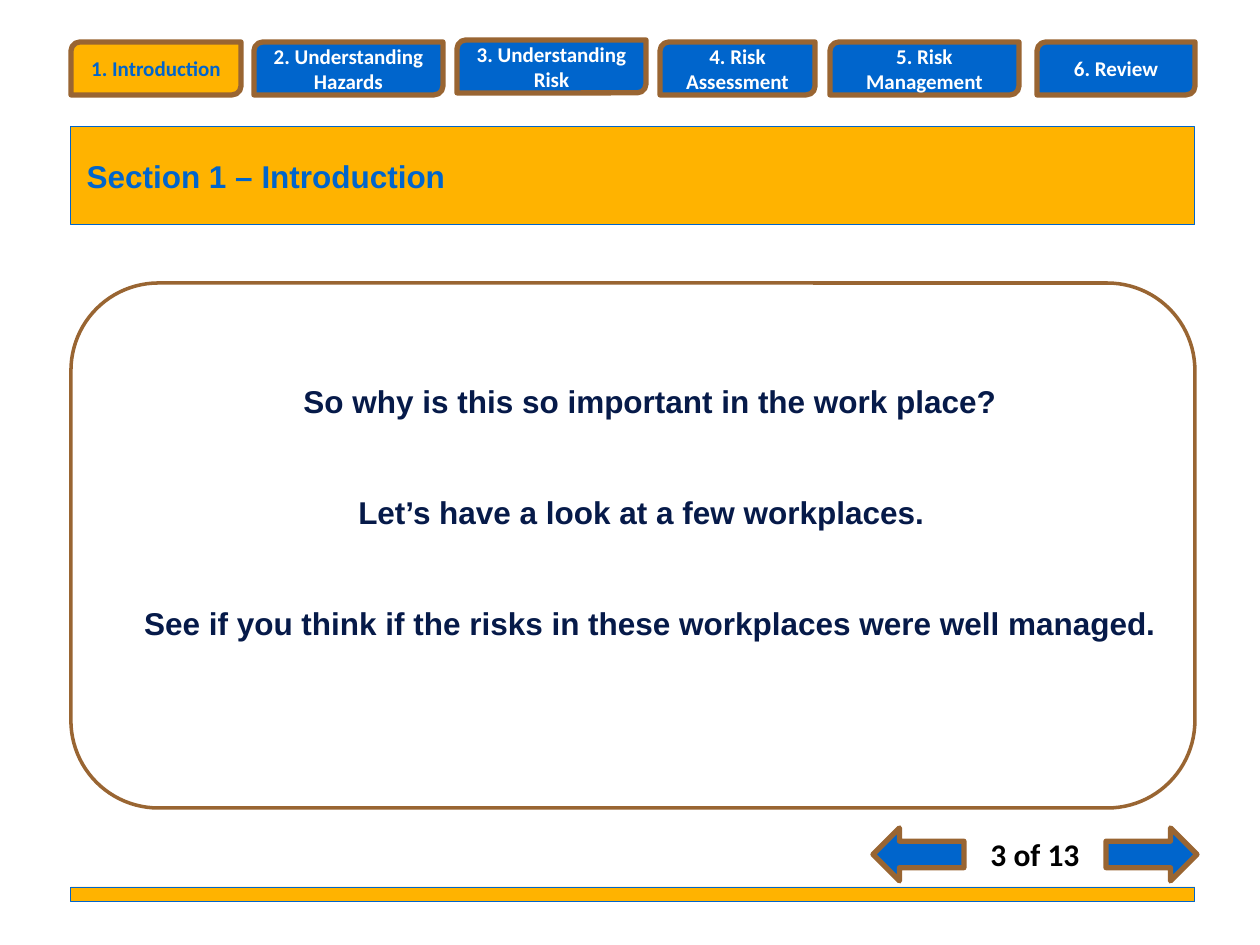
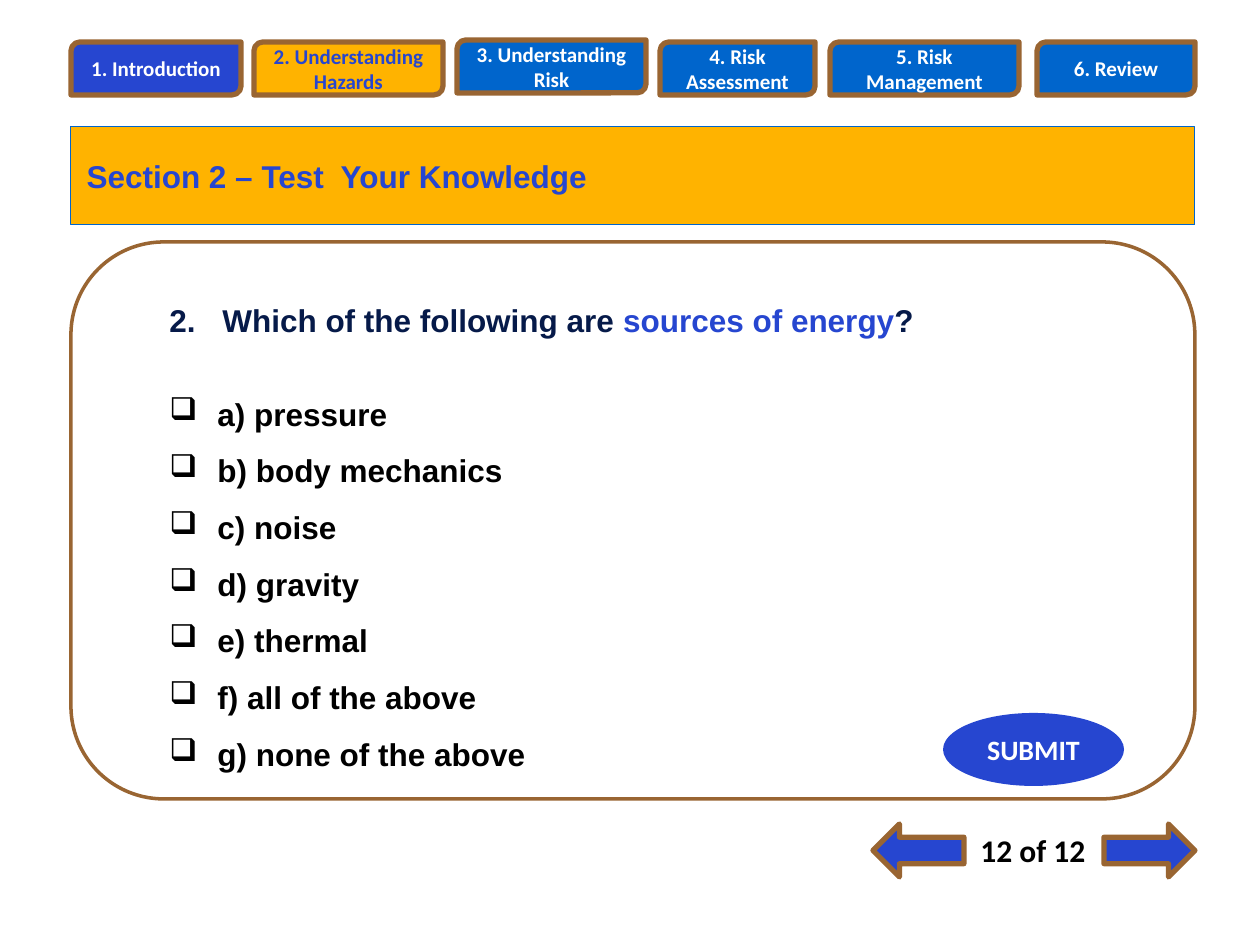
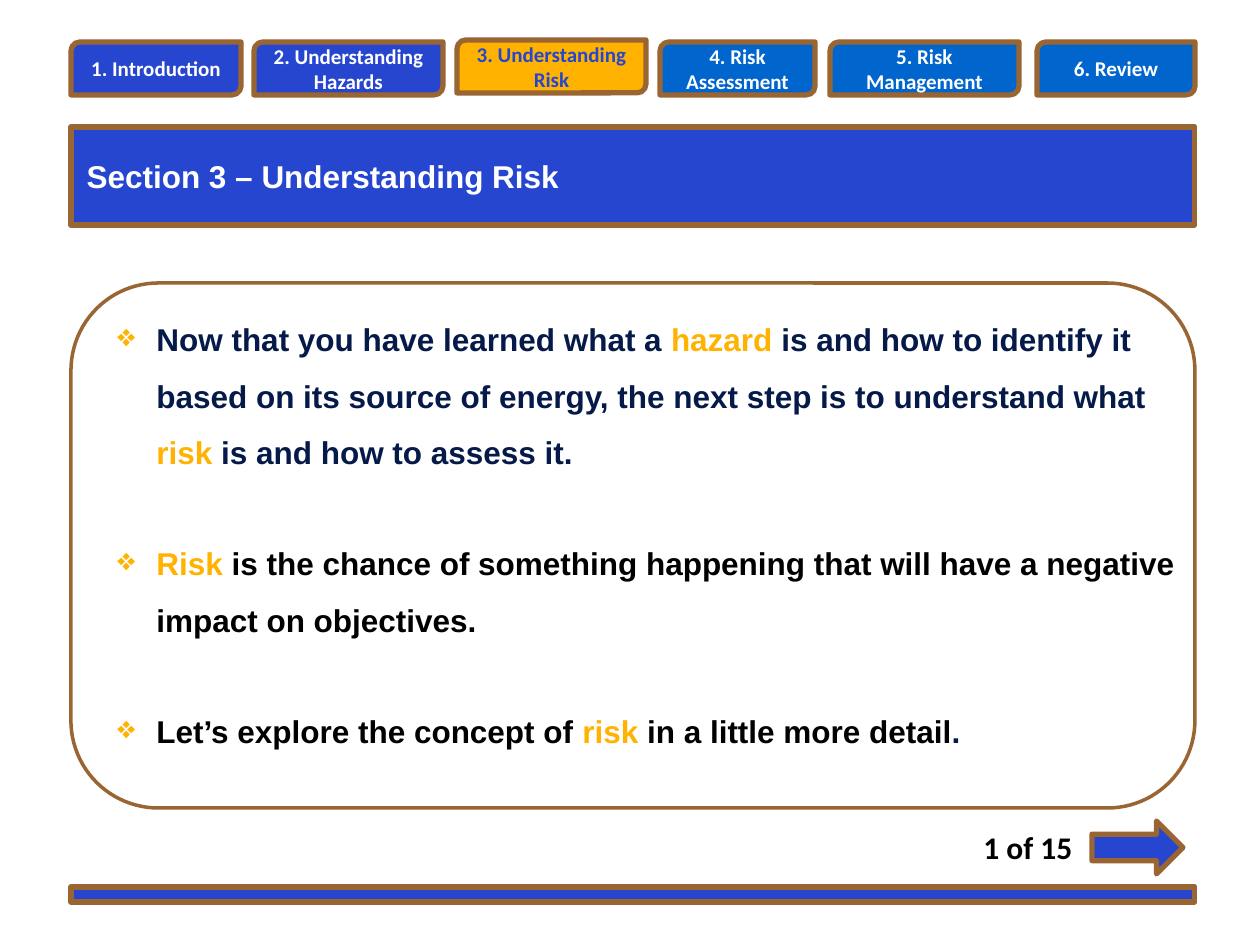
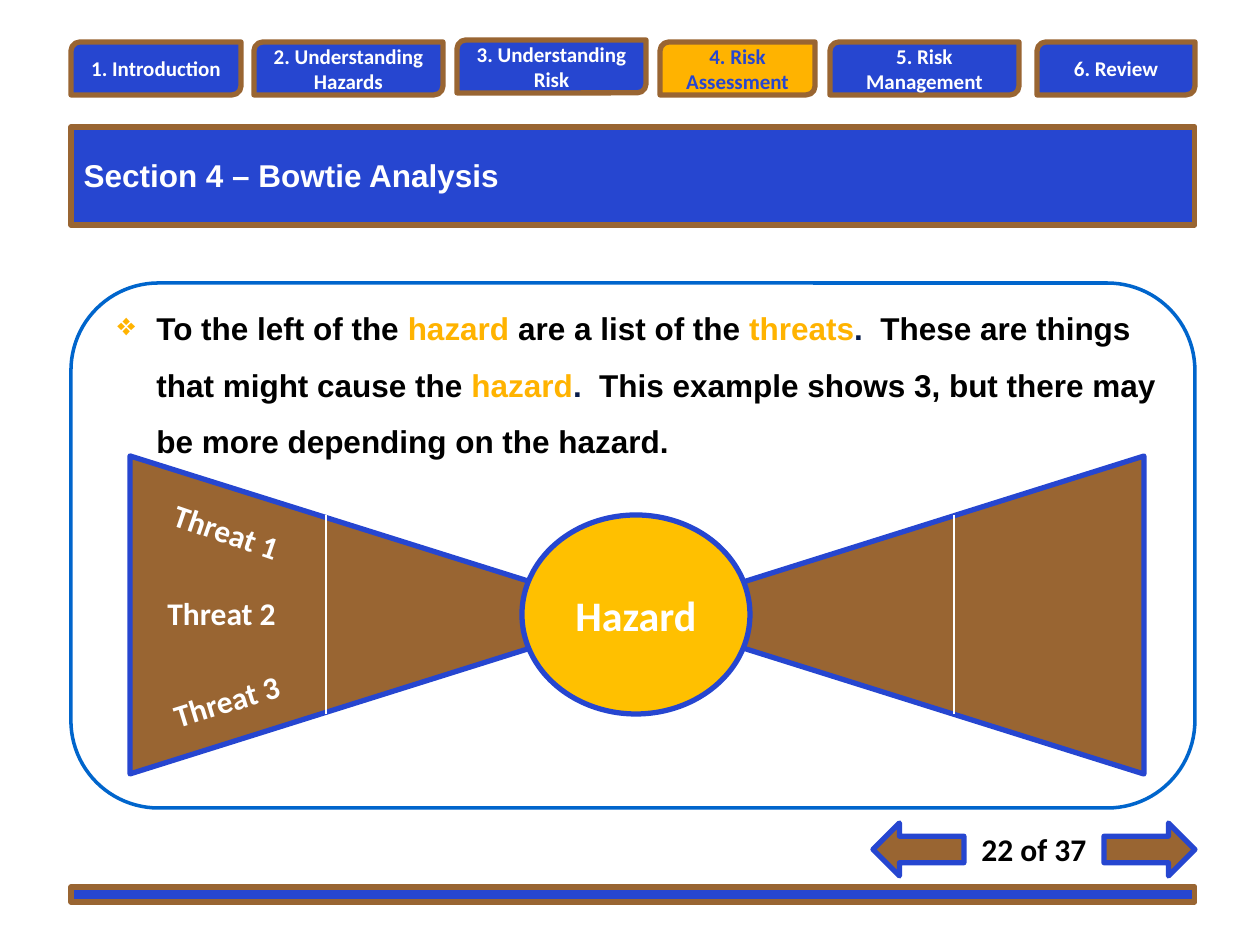
import pptx
import pptx.dml.color
import pptx.enum.shapes
import pptx.enum.text
import pptx.oxml.ns
import pptx.util
from lxml import etree

RGB = pptx.dml.color.RGBColor
SHAPE = pptx.enum.shapes.MSO_SHAPE
ALIGN = pptx.enum.text.PP_ALIGN
ANCHOR = pptx.enum.text.MSO_ANCHOR
qn = pptx.oxml.ns.qn

AMBER = RGB(0xFF, 0xB3, 0x00)
GOLD = RGB(0xFF, 0xC0, 0x00)
AZURE = RGB(0x00, 0x65, 0xCC)
ROYAL = RGB(0x26, 0x46, 0xD0)
BROWN = RGB(0x99, 0x65, 0x32)
NAVY = RGB(0x06, 0x1A, 0x49)
BLACK = RGB(0x00, 0x00, 0x00)
WHITE = RGB(0xFF, 0xFF, 0xFF)

EMU_PER_PX = 914400 / 126
BAND_LEFT, BAND_WIDTH = 71, 1124
TABS = [
    ("1. Introduction", 71, 42, 170),
    ("2. Understanding Hazards", 254, 42, 189),
    ("3. Understanding Risk", 457, 40, 189),
    ("4. Risk Assessment", 660, 42, 155),
    ("5. Risk Management", 830, 42, 189),
    ("6. Review", 1037, 42, 158),
]
WARM_BAND = (AMBER, AZURE, 0.5)
COOL_BAND = (ROYAL, BROWN, 3)


def px(length):
    return pptx.util.Emu(round(length * EMU_PER_PX))


def place(box):
    return [px(length) for length in box]


def add_box(page, kind, box, fill=None, line=None, weight=3, rotation=0):
    shape = page.shapes.add_shape(kind, *place(box))
    shape.shadow.inherit = False
    shape.rotation = rotation
    if fill is None:
        shape.fill.background()
    else:
        shape.fill.solid()
        shape.fill.fore_color.rgb = fill
    if line is None:
        shape.line.fill.background()
    else:
        shape.line.color.rgb = line
        shape.line.width = pptx.util.Pt(weight)
    return shape


def style_para(para, spans, size, font, align=ALIGN.LEFT):
    para.alignment = align
    para.font.name = font
    para.font.size = pptx.util.Pt(size)
    para.font.bold = True
    for text, color in spans:
        span = para.add_run()
        span.text = text
        if len(spans) > 1:
            span.font.color.rgb = color
    if len(spans) == 1:
        para.font.color.rgb = spans[0][1]


def add_label(shape, text, color, size):
    style_para(shape.text_frame.paragraphs[0], [(text, color)], size, "Calibri", ALIGN.CENTER)


def add_text(page, box, paragraphs, font="Arial", align=ALIGN.LEFT, rotation=0):
    shape = page.shapes.add_textbox(*place(box))
    shape.rotation = rotation
    frame = shape.text_frame
    frame.word_wrap = True
    for index, spans in enumerate(paragraphs):
        para = frame.add_paragraph() if index else frame.paragraphs[0]
        style_para(para, spans, 18, font, align)
    return frame.paragraphs


def space_lines(paras, gap=0):
    for index, para in enumerate(paras):
        para.line_spacing = 1.5
        if index and gap:
            para.space_before = pptx.util.Pt(gap)


def hang(para, indent, bullet=None, color=None):
    properties = para._p.get_or_add_pPr()
    properties.set("marL", str(px(indent)))
    properties.set("indent", str(-px(indent)))
    defaults = properties.find(qn("a:defRPr"))
    if color is not None:
        bullet_color = etree.Element(qn("a:buClr"))
        etree.SubElement(bullet_color, qn("a:srgbClr")).set("val", str(color))
        defaults.addprevious(bullet_color)
    if bullet:
        mark = etree.Element(qn("a:buChar"))
        mark.set("char", bullet)
        defaults.addprevious(mark)


def add_diamond_list(page, box, paragraphs):
    paras = add_text(page, box, paragraphs)
    space_lines(paras, 31)
    for para in paras:
        hang(para, 39, "❖", AMBER)


def add_title(page, text, color, band, left=74, top=151):
    title = page.shapes.title
    title.left, title.top, title.width, title.height = place((left, top, 954, 50))
    frame = title.text_frame
    frame.auto_size = pptx.enum.text.MSO_AUTO_SIZE.NONE
    frame.vertical_anchor = ANCHOR.TOP
    style_para(frame.paragraphs[0], [(text, color)], 18, "Arial")
    strip = add_box(page, SHAPE.RECTANGLE, (BAND_LEFT, 127, BAND_WIDTH, 98), *band)
    title.element.addprevious(strip.element)


def add_tabs(page, section, visited, accent):
    for number, (text, left, top, width) in enumerate(TABS, 1):
        active = number == section
        fill = AMBER if active else ROYAL if number <= visited else AZURE
        tab = add_box(page, SHAPE.ROUND_2_DIAG_RECTANGLE, (left, top, width, 53), fill, BROWN)
        add_label(tab, text, accent if active else WHITE, 12)


def add_panel(page, top=283, height=525, line=BROWN):
    add_box(page, SHAPE.ROUNDED_RECTANGLE, (BAND_LEFT, top, BAND_WIDTH, height), None, line, 2)


def add_footer(page, band):
    add_box(page, SHAPE.RECTANGLE, (BAND_LEFT, 887, BAND_WIDTH, 15), *band)


def add_pager(page, text, top, text_left, next_left, fill, line=BROWN, back=True):
    add_box(page, SHAPE.RIGHT_ARROW, (next_left, top, 91, 53), fill, line)
    align = ALIGN.CENTER if back else ALIGN.LEFT
    add_text(page, (text_left, top + 1, 134, 50), [[(text, BLACK)]], "Calibri", align)
    if back:
        add_box(page, SHAPE.LEFT_ARROW, (873, top, 91, 53), fill, line)


def add_divider(page, left):
    divider = page.shapes.add_connector(
        pptx.enum.shapes.MSO_CONNECTOR.STRAIGHT, *place((left, 515, left, 714)))
    divider.line.color.rgb = WHITE
    divider.line.width = pptx.util.Pt(1.5)
    etree.SubElement(divider.element.spPr, qn("a:effectLst"))


def add_bowtie(page):
    for left, rotation in ((732, 270), (224, 90)):
        add_box(page, SHAPE.FLOWCHART_EXTRACT, (left, 362, 318, 506), BROWN, ROYAL,
                rotation=rotation)
    knot = add_box(page, SHAPE.OVAL, (522, 515, 228, 199), GOLD, ROYAL)
    add_label(knot, "Hazard", WHITE, 24)
    for left in (326, 954):
        add_divider(page, left)
    threats = [(159, 512, 19), (155, 588, 0), (159, 670, 342.9)]
    for number, (left, top, rotation) in enumerate(threats, 1):
        add_text(page, (left, top, 170, 50), [[(f"Threat {number}", WHITE)]], "Calibri",
                 rotation=rotation)


def build_introduction(page):
    add_title(page, "Section 1 – Introduction", AZURE, WARM_BAND)
    add_panel(page)
    add_footer(page, WARM_BAND)
    lines = [
        "So why is this so important in the work place?",
        "Let’s have a look at a few workplaces.  ",
        "See if you think if the risks in these workplaces were well managed.",
    ]
    paras = add_text(page, (105, 357, 1090, 528), [[(line, NAVY)] for line in lines],
                     align=ALIGN.CENTER)
    space_lines(paras, 31)
    add_pager(page, "3 of 13", 828, 968, 1106, AZURE)
    add_tabs(page, 1, 0, AZURE)


def build_quiz(page):
    add_title(page, "Section 2 – Test  Your Knowledge", ROYAL, WARM_BAND)
    add_panel(page, 242, 557)
    question = [("2.\tWhich of the following are ", NAVY), ("sources of energy", ROYAL),
                ("?", NAVY)]
    answers = ["a) pressure", "b) body mechanics", "c) noise", "d) gravity", "e) thermal",
               "f) all of the above", "g) none of the above"]
    paras = add_text(page, (157, 295, 1037, 490),
                     [question] + [[(answer, BLACK)] for answer in answers])
    hang(paras[0], 53)
    paras[0].space_after = pptx.util.Pt(21)
    space_lines(paras[1:])
    for para in paras[1:]:
        hang(para, 48, "❑")
    submit = add_box(page, SHAPE.OVAL, (943, 713, 181, 73), ROYAL)
    add_label(submit, "SUBMIT", WHITE, 16)
    add_pager(page, "12 of 12", 824, 966, 1104, ROYAL)
    add_tabs(page, 2, 1, ROYAL)


def build_risk(page):
    add_title(page, "Section 3 – Understanding Risk", WHITE, COOL_BAND)
    add_panel(page)
    add_diamond_list(page, (105, 295, 1090, 528), [
        [("Now that you have learned what a ", NAVY), ("hazard", AMBER),
         (" is and how to identify it based on its source of energy, "
          "the next step is to understand what ", NAVY),
         ("risk", AMBER), (" is and how to assess it.", NAVY)],
        [("Risk ", AMBER),
         ("is the chance of something happening that will have a negative "
          "impact on objectives.", BLACK)],
        [("Let’s explore the concept of ", BLACK), ("risk ", AMBER),
         ("in a little more detail", BLACK), (".", NAVY)],
    ])
    add_pager(page, "1 of 15", 821, 971, 1092, ROYAL, back=False)
    add_tabs(page, 3, 2, ROYAL)
    add_footer(page, COOL_BAND)


def build_analysis(page):
    add_title(page, "Section 4 – Bowtie Analysis", WHITE, COOL_BAND, 71, 150)
    add_panel(page, line=AZURE)
    add_diamond_list(page, (105, 284, 1090, 184), [
        [("To the left of the ", BLACK), ("hazard ", AMBER), ("are a list of the ", BLACK),
         ("threats", AMBER), (".  ", NAVY), ("These are things that might cause the ", BLACK),
         ("hazard", AMBER), (".  ", NAVY),
         ("This example shows 3, but there may be more depending on the hazard.", BLACK)],
    ])
    add_bowtie(page)
    add_tabs(page, 4, len(TABS), ROYAL)
    add_footer(page, COOL_BAND)
    add_pager(page, "22 of 37", 823, 967, 1104, BROWN, ROYAL)


def main():
    deck = pptx.Presentation()
    deck.slide_width, deck.slide_height = px(1260), px(945)
    title_only = deck.slide_layouts.get_by_name("Title Only")
    for build in (build_introduction, build_quiz, build_risk, build_analysis):
        build(deck.slides.add_slide(title_only))
    deck.save("out.pptx")


if __name__ == "__main__":
    main()
